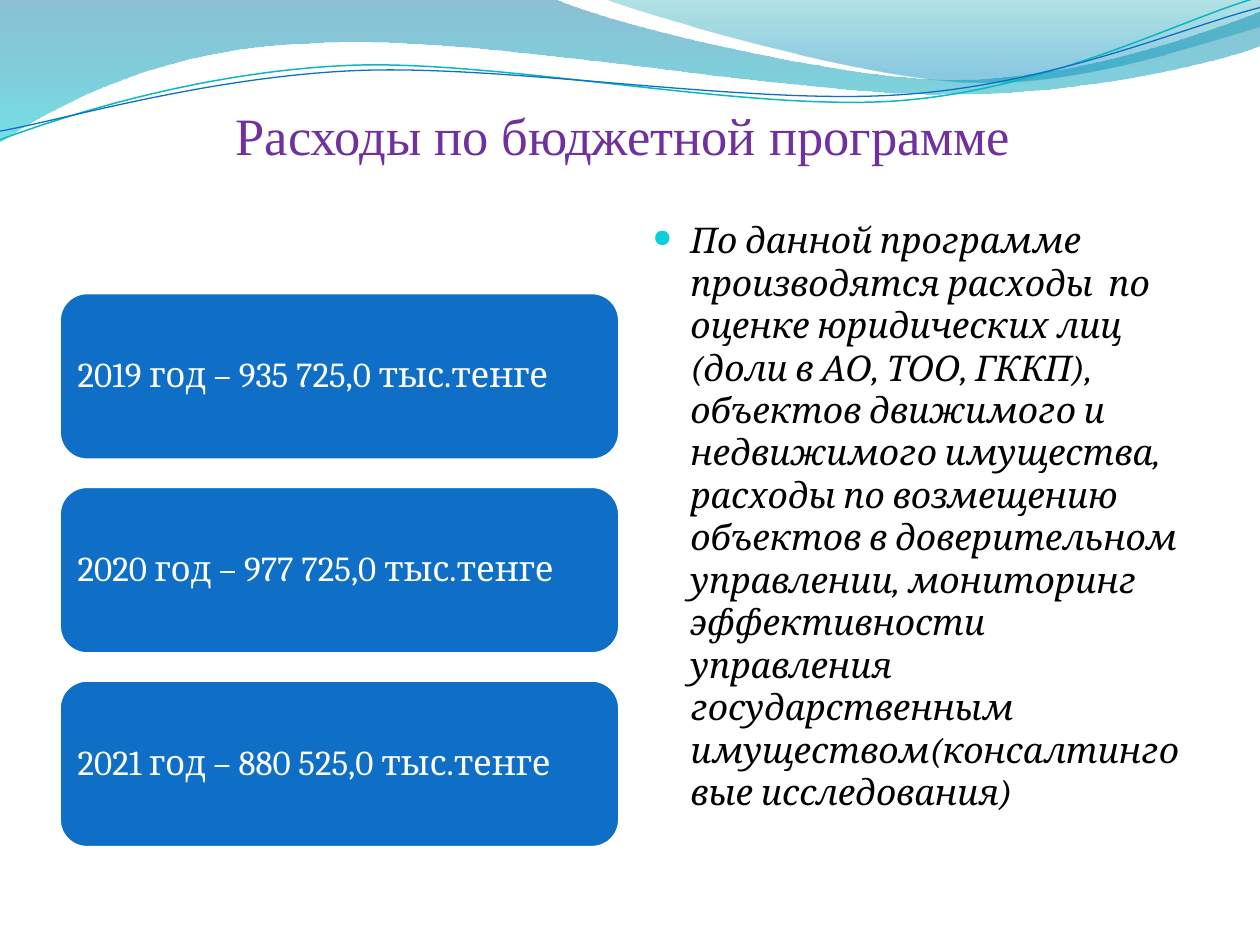
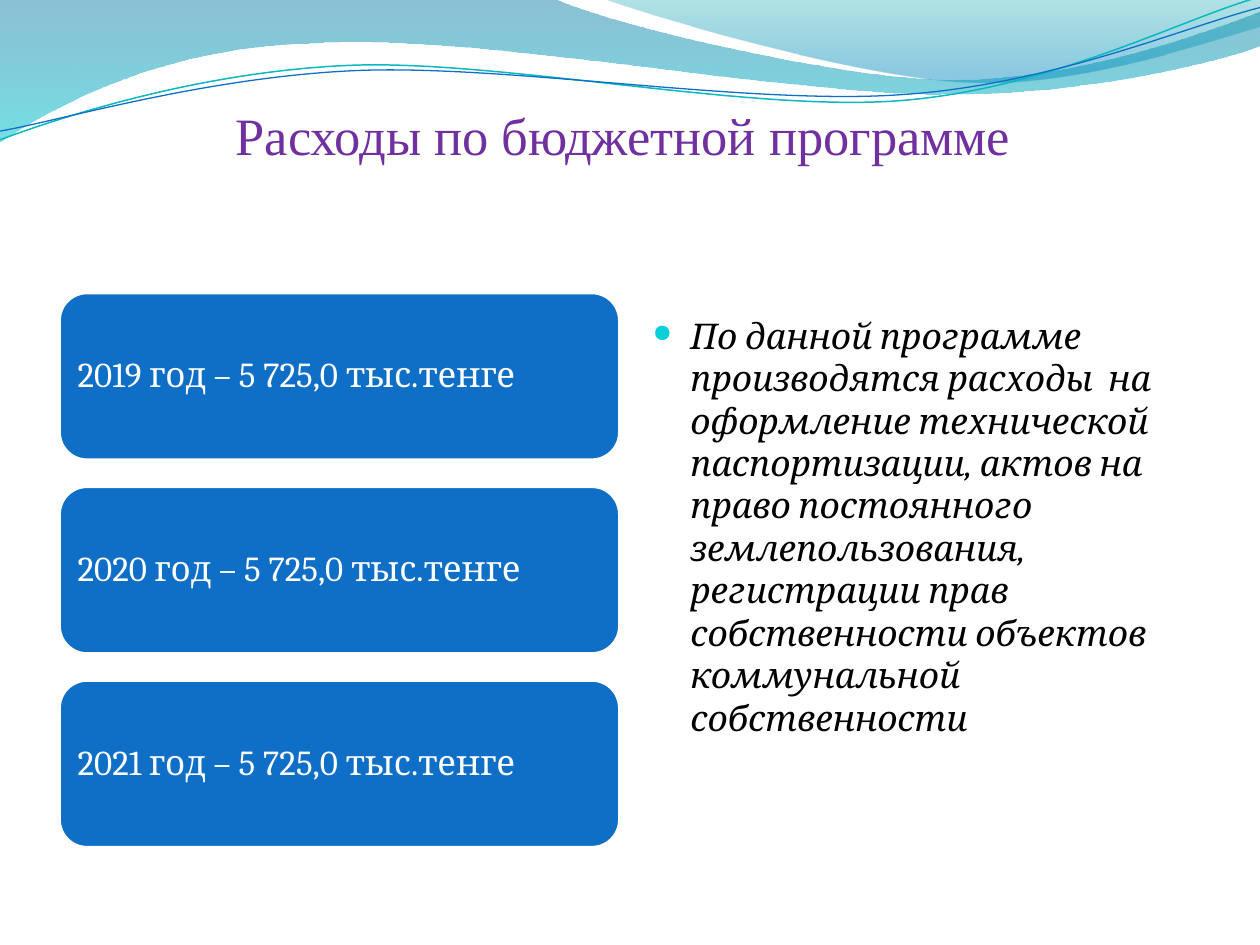
"""Build two budget programme slides with a shared wave header."""
from lxml.etree import SubElement
from pptx import Presentation
from pptx.dml.color import RGBColor
from pptx.enum.shapes import MSO_SHAPE
from pptx.enum.text import MSO_ANCHOR, PP_ALIGN
from pptx.oxml.ns import qn
from pptx.util import Pt

WHITE = RGBColor(0xFF, 0xFF, 0xFF)
BLACK = RGBColor(0x00, 0x00, 0x00)
PURPLE = RGBColor(0x70, 0x30, 0xA0)
BLUE = RGBColor(0x0F, 0x6F, 0xC6)
TEAL = RGBColor(0x0A, 0xB8, 0xBF)
BULLET_COLOR = RGBColor(0x0B, 0xD0, 0xD9)
DEEP_BLUE = RGBColor(0x00, 0x74, 0xA1)
AQUA = RGBColor(0x00, 0xC6, 0xCF)
SEA_GREEN = RGBColor(0x00, 0xA1, 0xA9)
SKY_BLUE = RGBColor(0x00, 0x8B, 0xBF)

TITLE = "Расходы по бюджетной программе "
SLIDES = [
    {
        "amounts": [("2019", "935 725,0"), ("2020", "977 725,0"), ("2021", "880 525,0")],
        "purpose": "По данной программе производятся расходы  по оценке юридических лиц "
                   "(доли в АО, ТОО, ГККП), объектов движимого и недвижимого имущества, "
                   "расходы по возмещению объектов в доверительном управлении, мониторинг "
                   "эффективности управления государственным "
                   "имуществом(консалтинговые исследования)",
        "bottom_margin": 66,
    },
    {
        "amounts": [("2019", "5 725,0"), ("2020", "5 725,0"), ("2021", "5 725,0")],
        "purpose": "По данной программе производятся расходы  на оформление технической "
                   "паспортизации, актов на право постоянного землепользования, регистрации "
                   "прав собственности объектов коммунальной собственности",
        "bottom_margin": 54,
    },
]

# Each step is one point for a straight side or three for a Bezier curve.
BANDS = [
    ((0, 0), [
        [(316.8, -0.7)],
        [(342.7, 12.2), (478.1, 45.4), (545.8, 45.4)],
        [(614.2, 45.4), (689.8, 18.7), (720, 6.5)],
        [(720.7, 25.9)],
        [(707.8, 31.7), (626.4, 54.7), (537.1, 54)],
        [(447.8, 54), (275, 20.2), (185, 24.5)],
        [(92.9, 25.9), (33.1, 59.8), (-0.7, 81.4)],
        [(0, 0)],
    ], [(0, DEEP_BLUE, 45), (1, AQUA, 55)]),
    ((344.9, -0.7), [
        [(366.5, 7.9), (491, 44.6), (553.7, 46.8)],
        [(616.3, 49.7), (691.9, 23), (720, 15.1)],
        [(720, 0)],
        [(344.9, -0.7)],
    ], [(0, SEA_GREEN, 30), (0.8, SKY_BLUE, 45)]),
]
WAVES = [
    ((0, 79.9), [
        [(34.6, 67), (113.8, 41), (199.4, 37.4)],
        [(284.4, 33.8), (427, 64.1), (513.4, 57.6)],
        [(599.8, 51.1), (675.4, 10.8), (718.6, -1.4)],
    ], TEAL, 0.85),
    ((0, 74.9), [
        [(33.8, 69.1), (118.1, 43.9), (203.8, 40.3)],
        [(290.2, 36.7), (429.8, 60.5), (516.2, 54)],
        [(601.9, 48.2), (677.5, 15.1), (720, 4.3)],
    ], BLUE, 0.75),
]

CARD_LEFT, CARD_TOP, CARD_WIDTH, CARD_HEIGHT = 33.8, 167.2, 320.4, 95.8
CARD_PITCH = 110.7


def add_outline(page, start, steps, close):
    vertices = [(Pt(x), Pt(y)) for step in steps for x, y in step]
    builder = page.shapes.build_freeform(Pt(start[0]), Pt(start[1]))
    builder.add_line_segments(vertices, close=close)
    shape = builder.convert_to_shape()
    shape.shadow.inherit = False
    segments = iter(list(shape._element.iter(qn("a:lnTo"))))
    for step in steps:
        sides = [next(segments) for _ in step]
        if len(sides) == 3:
            outline = sides[0].getparent()
            curve = SubElement(outline, qn("a:cubicBezTo"))
            outline.replace(sides[0], curve)
            curve.extend([side[0] for side in sides])
            for side in sides[1:]:
                outline.remove(side)
    return shape


def add_header(page):
    for start, steps, stops in BANDS:
        band = add_outline(page, start, steps, True)
        band.line.fill.background()
        band.fill.gradient()
        band.fill.gradient_angle = 270
        for stop, (position, color, _) in zip(band.fill.gradient_stops, stops):
            stop.position = position
            stop.color.rgb = color
        colors = list(band._element.spPr.iter(qn("a:srgbClr")))
        for element, (_, _, opacity) in zip(colors, stops):
            SubElement(element, qn("a:alpha"), val=str(opacity * 1000))
    for start, steps, color, width in WAVES:
        wave = add_outline(page, start, steps, False)
        wave.fill.background()
        wave.line.color.rgb = color
        wave.line.width = Pt(width)


def set_text(frame, text, font, size, color, anchor, align, margins):
    frame.text = text
    frame.word_wrap = True
    frame.vertical_anchor = anchor
    (frame.margin_left, frame.margin_top,
     frame.margin_right, frame.margin_bottom) = map(Pt, margins)
    para = frame.paragraphs[0]
    para.alignment = align
    span = para.runs[0]
    span.font.name = font
    span.font.size = Pt(size)
    span.font.color.rgb = color
    return para


def add_title(page):
    box = page.shapes.add_textbox(Pt(36), Pt(55.4), Pt(648), Pt(90))
    set_text(box.text_frame, TITLE, "Times New Roman", 30, PURPLE,
             MSO_ANCHOR.TOP, PP_ALIGN.CENTER, (0, 3.6, 0, 0))


def add_cards(page, amounts):
    for index, (year, amount) in enumerate(amounts):
        card = page.shapes.add_shape(
            MSO_SHAPE.ROUNDED_RECTANGLE, Pt(CARD_LEFT), Pt(CARD_TOP + index * CARD_PITCH),
            Pt(CARD_WIDTH), Pt(CARD_HEIGHT))
        card.shadow.inherit = False
        card.fill.solid()
        card.fill.fore_color.rgb = BLUE
        card.line.color.rgb = WHITE
        card.line.width = Pt(2)
        para = set_text(card.text_frame, f"{year} год – {amount} тыс.тенге", "Cambria", 20,
                        WHITE, MSO_ANCHOR.MIDDLE, PP_ALIGN.LEFT, (5.9, 5.7, 5.7, 5.7))
        para.line_spacing = 0.9


def add_purpose(page, text, bottom_margin):
    box = page.shapes.add_textbox(Pt(365.8), Pt(151.2), Pt(318.2), Pt(349.2))
    para = set_text(box.text_frame, text, "Cambria", 20.2, BLACK, MSO_ANCHOR.MIDDLE,
                    PP_ALIGN.LEFT, (7.2, 3.6, 7.2, bottom_margin))
    para.runs[0].font.italic = True
    properties = para._p.get_or_add_pPr()
    properties.set("marL", str(Pt(21.6)))
    properties.set("indent", str(-Pt(21.6)))
    bullet_color = SubElement(properties, qn("a:buClr"))
    SubElement(bullet_color, qn("a:srgbClr"), val=str(BULLET_COLOR))
    SubElement(properties, qn("a:buSzPct"), val="70000")
    SubElement(properties, qn("a:buChar"), char="●")


def main():
    deck = Presentation()
    deck.slide_width, deck.slide_height = Pt(720), Pt(540)
    for content in SLIDES:
        page = deck.slides.add_slide(deck.slide_layouts[6])
        add_header(page)
        add_title(page)
        add_cards(page, content["amounts"])
        add_purpose(page, content["purpose"], content["bottom_margin"])
    deck.save("out.pptx")


if __name__ == "__main__":
    main()
